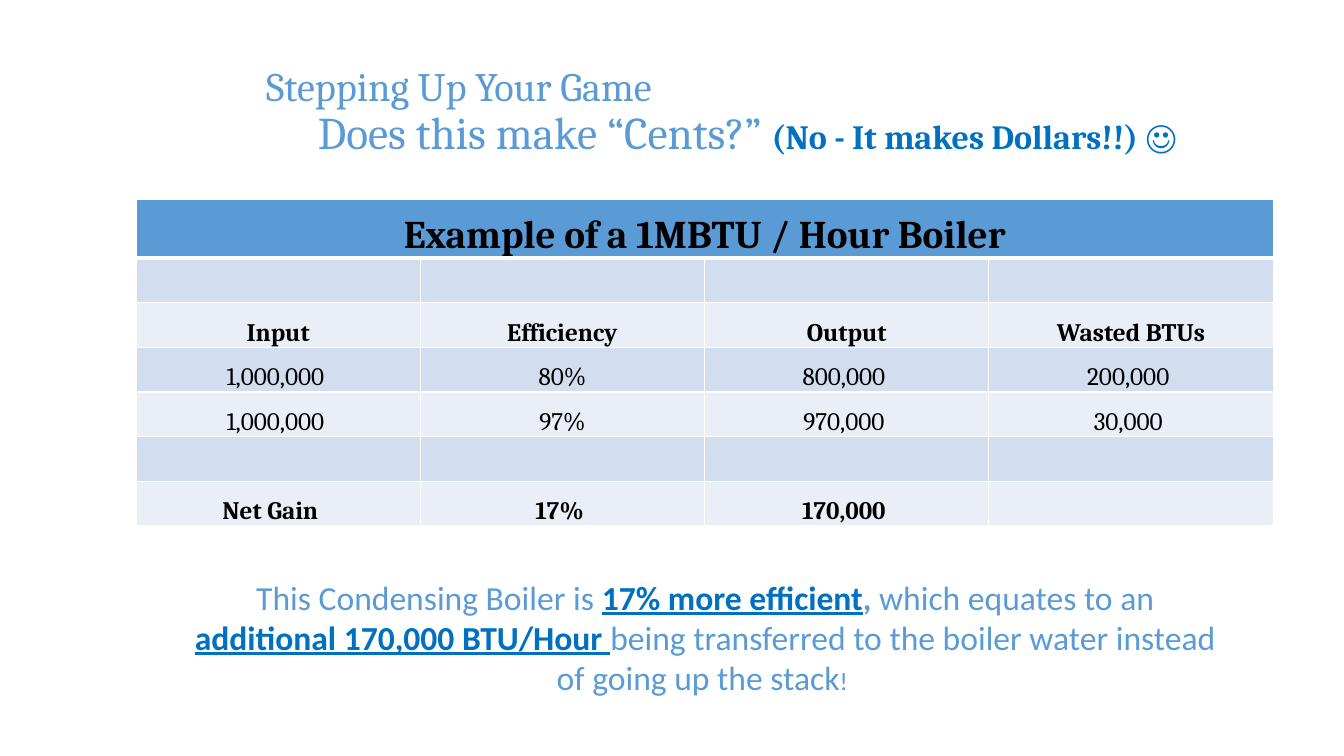
import dataclasses
import lxml.etree
import pptx
import pptx.dml.color
import pptx.enum.text
import pptx.oxml.ns
import pptx.util

Pt = pptx.util.Pt
PP_ALIGN = pptx.enum.text.PP_ALIGN
MSO_ANCHOR = pptx.enum.text.MSO_ANCHOR


@dataclasses.dataclass(frozen=True)
class Theme:
    serif: str = "Cambria"
    sans: str = "Calibri"
    blue: str = "5B9BD5"
    accent: str = "0070C0"
    black: str = "000000"
    white: str = "FFFFFF"
    bands: tuple = ("EAEFF7", "D2DEEF")
    title: float = 28.8
    question: float = 32.4
    answer: float = 24.3
    body: float = 24
    small: float = 18
    heading: float = 28


class SlideBuilder:
    def __init__(self, prs, theme):
        self.theme = theme
        self.slide = prs.slides.add_slide(prs.slide_layouts[5])

    def run(self, p, text, font, size, color, bold=False, underline=False):
        r = p.add_run()
        r.text = text
        r.font.name = font
        r.font.size = Pt(size)
        r.font.bold = bold
        r.font.underline = underline
        r.font.color.rgb = pptx.dml.color.RGBColor.from_string(color)

    def title(self, box, first_line, second_line, hanging):
        t = self.theme
        sp = self.slide.shapes.title
        sp.left, sp.top, sp.width, sp.height = map(Pt, box)
        tf = sp.text_frame
        tf.word_wrap = True
        tf.auto_size = pptx.enum.text.MSO_AUTO_SIZE.NONE
        tf.vertical_anchor = MSO_ANCHOR.MIDDLE
        p = tf.paragraphs[0]
        p.alignment = PP_ALIGN.LEFT
        p.line_spacing = 0.9
        pPr = p._p.get_or_add_pPr()
        pPr.set("marL", str(Pt(hanging)))
        pPr.set("indent", str(-Pt(hanging)))
        self.run(p, first_line, t.serif, t.title, t.blue)
        p.add_line_break()
        for text, size, color, bold in second_line:
            self.run(p, text, t.serif, size, color, bold)

    def text(self, box, runs):
        sp = self.slide.shapes.add_textbox(*map(Pt, box))
        tf = sp.text_frame
        tf.word_wrap = True
        p = tf.paragraphs[0]
        p.alignment = PP_ALIGN.CENTER
        for text, size, color, bold, underline in runs:
            self.run(p, text, self.theme.sans, size, color, bold, underline)

    def border(self, cell, side, width):
        qn = pptx.oxml.ns.qn
        ln = lxml.etree.SubElement(cell._tc.get_or_add_tcPr(), qn("a:ln" + side), w=str(Pt(width)))
        fill = lxml.etree.SubElement(ln, qn("a:solidFill"))
        lxml.etree.SubElement(fill, qn("a:srgbClr"), val=self.theme.white)

    def cell(self, cell, text, fill, size, bold, thick):
        for side in "LRTB":
            self.border(cell, side, 3 if side == thick else 1)
        cell.fill.solid()
        cell.fill.fore_color.rgb = pptx.dml.color.RGBColor.from_string(fill)
        cell.vertical_anchor = MSO_ANCHOR.BOTTOM
        cell.margin_left = cell.margin_right = cell.margin_top = Pt(0.7)
        cell.margin_bottom = 0
        if text:
            p = cell.text_frame.paragraphs[0]
            p.alignment = PP_ALIGN.CENTER
            self.run(p, text, self.theme.serif, size, self.theme.black, bold)

    def table(self, box, rows, header_height, bold_rows):
        t = self.theme
        cols = len(rows[1])
        table = self.slide.shapes.add_table(len(rows), cols, *map(Pt, box)).table
        table.first_row = table.horz_banding = False
        row_height = (box[3] - header_height) / (len(rows) - 1)
        for col in table.columns:
            col.width = Pt(box[2] / cols)
        for i, row in enumerate(rows):
            table.rows[i].height = Pt(row_height if i else header_height)
            fill = t.bands[i % 2] if i else t.blue
            size = t.small if i else t.heading
            thick = {0: "B", 1: "T"}.get(i)
            for j, text in enumerate(row):
                self.cell(table.cell(i, j), text, fill, size, i in bold_rows, thick)
        table.cell(0, 0).merge(table.cell(0, cols - 1))
        return table


def main():
    prs = pptx.Presentation()
    prs.slide_width, prs.slide_height = Pt(960), Pt(540)
    t = Theme()
    s = SlideBuilder(prs, t)

    s.title(
        (182.9, 28.8, 711.4, 104.4),
        "Stepping Up Your Game",
        [
            ("Does this make “Cents?” ", t.question, t.blue, False),
            ("(No - It makes Dollars!!) ", t.answer, t.accent, True),
            ("☺", t.answer, t.accent, False),
        ],
        hanging=37,
    )

    blank = [""] * 4
    boiler = s.table(
        (97.2, 142.6, 812.2, 233.3),
        [
            ["Example of a 1MBTU / Hour Boiler", "", "", ""],
            blank,
            ["Input", "Efficiency", "Output", "Wasted BTUs"],
            ["1,000,000 ", "80%", "800,000 ", "200,000 "],
            ["1,000,000 ", "97%", "970,000 ", "30,000 "],
            blank,
            ["Net Gain", "17% ", "170,000 ", ""],
        ],
        header_height=41.8,
        bold_rows=(0, 2, 6),
    )
    boiler.cell(6, 0).margin_right = Pt(12)

    s.text(
        (131.8, 408.2, 743.8, 94.3),
        [
            ("This Condensing Boiler is ", t.body, t.blue, False, False),
            ("17% more efficient", t.body, t.accent, True, True),
            (", ", t.body, t.blue, True, False),
            ("which equates to an ", t.body, t.blue, False, False),
            ("additional 170,000 BTU/Hour ", t.body, t.accent, True, True),
            ("being transferred to the boiler water instead of going up the stack",
             t.body, t.blue, False, False),
            ("! ", t.small, t.blue, False, False),
        ],
    )
    prs.save("out.pptx")


if __name__ == "__main__":
    main()
